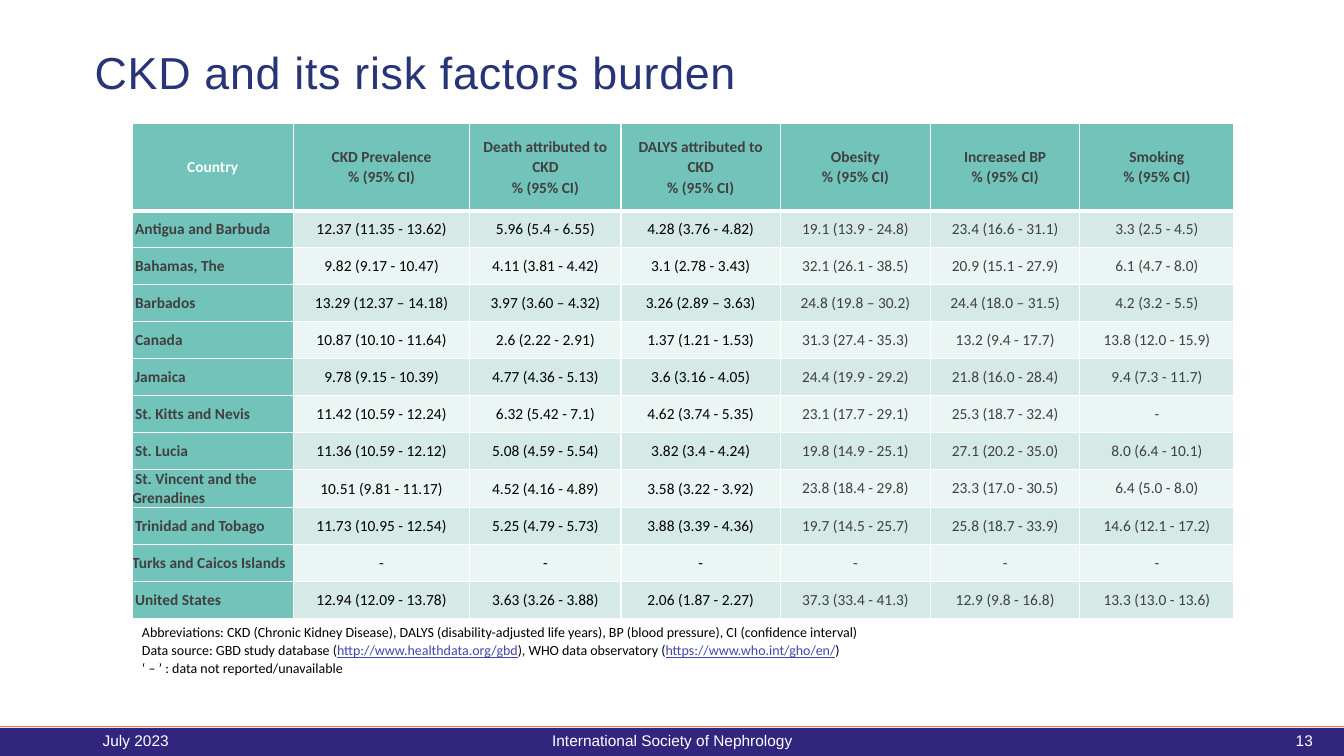
import pptx
import pptx.dml.color
import pptx.enum.shapes
import pptx.enum.text
import pptx.oxml
import pptx.util
import lxml.etree

Inches = pptx.util.Inches
Pt = pptx.util.Pt
ALIGN = pptx.enum.text.PP_ALIGN
MIDDLE = pptx.enum.text.MSO_ANCHOR.MIDDLE
DRAWING = "http://schemas.openxmlformats.org/drawingml/2006/main"

TEAL, WHITE, GREY, BLACK = "72C3B9", "FFFFFF", "404040", "000000"
BANDS = ["EBF5F3", "D5E9E6"]


def color(hex_text):
    return pptx.dml.color.RGBColor.from_string(hex_text)


def style(font, name, size, hex_text, bold=False):
    font.name = name
    font.size = Pt(size)
    font.bold = bold
    font.color.rgb = color(hex_text)


deck = pptx.Presentation()
deck.slide_width = Inches(13.33)
deck.slide_height = Inches(7.5)
page = deck.slides.add_slide(deck.slide_layouts[6])

footer_bar = page.shapes.add_shape(
    pptx.enum.shapes.MSO_SHAPE.RECTANGLE, 0, Inches(7.22), Inches(13.33), Inches(0.28))
footer_bar.shadow.inherit = False
footer_bar.fill.solid()
footer_bar.fill.fore_color.rgb = color("32257E")
footer_bar.line.fill.background()

footer_rule = page.shapes.add_connector(
    pptx.enum.shapes.MSO_CONNECTOR.STRAIGHT, 0, Inches(7.21), Inches(13.33), Inches(7.21))
footer_rule.line.color.rgb = color("FE7055")
footer_rule.line.width = Pt(0.75)
lxml.etree.SubElement(footer_rule._element.spPr, f"{{{DRAWING}}}effectLst")

headings = ["Country", "CKD Prevalence", "Death attributed to CKD", "DALYS attributed to CKD",
            "Obesity", "Increased BP", "Smoking"]
countries = [
    ["Antigua and Barbuda", "12.37 (11.35 - 13.62)", "5.96 (5.4 - 6.55)", "4.28 (3.76 - 4.82)",
     "19.1 (13.9 - 24.8)", "23.4 (16.6 - 31.1)", "3.3 (2.5 - 4.5)"],
    ["Bahamas, The", "9.82 (9.17 - 10.47)", "4.11 (3.81 - 4.42)", "3.1 (2.78 - 3.43)",
     "32.1 (26.1 - 38.5)", "20.9 (15.1 - 27.9)", "6.1 (4.7 - 8.0)"],
    ["Barbados", "13.29 (12.37 – 14.18)", "3.97 (3.60 – 4.32)", "3.26 (2.89 – 3.63)",
     "24.8 (19.8 – 30.2)", "24.4 (18.0 – 31.5)", "4.2 (3.2 - 5.5)"],
    ["Canada", "10.87 (10.10 - 11.64)", "2.6 (2.22 - 2.91)", "1.37 (1.21 - 1.53)",
     "31.3 (27.4 - 35.3)", "13.2 (9.4 - 17.7)", "13.8 (12.0 - 15.9)"],
    ["Jamaica", "9.78 (9.15 - 10.39)", "4.77 (4.36 - 5.13)", "3.6 (3.16 - 4.05)",
     "24.4 (19.9 - 29.2)", "21.8 (16.0 - 28.4)", "9.4 (7.3 - 11.7)"],
    ["St. Kitts and Nevis", "11.42 (10.59 - 12.24)", "6.32 (5.42 - 7.1)", "4.62 (3.74 - 5.35)",
     "23.1 (17.7 - 29.1)", "25.3 (18.7 - 32.4)", "-"],
    ["St. Lucia", "11.36 (10.59 - 12.12)", "5.08 (4.59 - 5.54)", "3.82 (3.4 - 4.24)",
     "19.8 (14.9 - 25.1)", "27.1 (20.2 - 35.0)", "8.0 (6.4 - 10.1)"],
    ["St. Vincent and the Grenadines", "10.51 (9.81 - 11.17)", "4.52 (4.16 - 4.89)",
     "3.58 (3.22 - 3.92)", "23.8 (18.4 - 29.8)", "23.3 (17.0 - 30.5)", "6.4 (5.0 - 8.0)"],
    ["Trinidad and Tobago", "11.73 (10.95 - 12.54)", "5.25 (4.79 - 5.73)", "3.88 (3.39 - 4.36)",
     "19.7 (14.5 - 25.7)", "25.8 (18.7 - 33.9)", "14.6 (12.1 - 17.2)"],
    ["Turks and Caicos Islands"] + ["-"] * 6,
    ["United States", "12.94 (12.09 - 13.78)", "3.63 (3.26 - 3.88)", "2.06 (1.87 - 2.27)",
     "37.3 (33.4 - 41.3)", "12.9 (9.8 - 16.8)", "13.3 (13.0 - 13.6)"],
]
header = headings[:1] + [f"{heading}\n% (95% CI)" for heading in headings[1:]]
rows = [header] + countries
column_widths = [1.6, 1.75, 1.5, 1.58, 1.49, 1.48, 1.53]

table = page.shapes.add_table(
    len(rows), len(header), Inches(1.31), Inches(1.22), Inches(10.92), Inches(4.91)).table
for column, width in zip(table.columns, column_widths):
    column.width = Inches(width)
for row in table.rows:
    row.height = Inches(4.04 / 11)
table.rows[0].height = Inches(0.87)

for row_index, values in enumerate(rows):
    for column_index, value in enumerate(values):
        cell = table.cell(row_index, column_index)
        in_header, in_names = row_index == 0, column_index == 0
        in_burden = not in_header and 1 <= column_index <= 3
        side = 0.03 if in_header else 0.01 if in_burden else 0
        cell.margin_left = cell.margin_right = Inches(side)
        cell.margin_top = Inches(0.01 if in_burden else 0)
        cell.margin_bottom = 0
        cell.vertical_anchor = MIDDLE
        cell.fill.solid()
        cell.fill.fore_color.rgb = color(TEAL if in_header or in_names else BANDS[row_index % 2])

        text_color = WHITE if in_header and in_names else BLACK if in_burden else GREY
        cell.text_frame.text = value
        for para in cell.text_frame.paragraphs:
            para.alignment = ALIGN.LEFT if in_names and not in_header else ALIGN.CENTER
            if in_header:
                para.line_spacing = 1.07
            elif in_names and not value.startswith("Turks"):
                para._p.get_or_add_pPr().set("indent", str(Inches(0.03)))
            for span in para.runs:
                style(span.font, "Calibri", 11, text_color, in_header or in_names)

        for position, edge in enumerate(["lnL", "lnR", "lnT", "lnB"]):
            heavy = (row_index, edge) in [(0, "lnB"), (1, "lnT")]
            border = pptx.oxml.parse_xml(
                f'<a:{edge} xmlns:a="{DRAWING}" w="{Pt(3 if heavy else 1)}">'
                f'<a:solidFill><a:srgbClr val="{WHITE}"/></a:solidFill></a:{edge}>')
            cell._tc.get_or_add_tcPr().insert(position, border)

notes = [
    ["Abbreviations: CKD (Chronic Kidney Disease), DALYS (disability-adjusted life years), "
     "BP (blood pressure), CI (confidence interval)"],
    ["Data source: GBD study database (", "http://www.healthdata.org/gbd",
     "), WHO data observatory (", "https://www.who.int/gho/en/", ")"],
    ["‘ – ’ : data not reported/unavailable"],
]
notes_box = page.shapes.add_textbox(Inches(1.31), Inches(6.13), Inches(8.25), Inches(0.64))
notes_box.text_frame.word_wrap = True
for index, pieces in enumerate(notes):
    para = notes_box.text_frame.paragraphs[0] if index == 0 else notes_box.text_frame.add_paragraph()
    para.line_spacing = 1.07
    for piece in pieces:
        span = para.add_run()
        span.text = piece
        is_address = piece.startswith("http")
        style(span.font, "Calibri", 10, "4248A9" if is_address else BLACK)
        span.font.underline = is_address

labels = [
    ("CKD and its risk factors burden", 0.84, 0.39, 9.26, 0.71, 32, "283378", ALIGN.LEFT),
    ("July 2023", 0.92, 7.15, 3, 0.4, 11, WHITE, ALIGN.LEFT),
    ("International Society of Nephrology", 4.42, 7.15, 4.5, 0.4, 11, WHITE, ALIGN.CENTER),
    ("13", 9.42, 7.15, 3.7, 0.4, 11, WHITE, ALIGN.RIGHT),
]
for text, left, top, width, height, size, text_color, alignment in labels:
    box = page.shapes.add_textbox(Inches(left), Inches(top), Inches(width), Inches(height))
    box.text_frame.word_wrap = True
    box.text_frame.vertical_anchor = MIDDLE
    box.text_frame.text = text
    para = box.text_frame.paragraphs[0]
    para.alignment = alignment
    style(para.runs[0].font, "Arial", size, text_color)
    if size == 32:
        para.line_spacing = 0.9
        para.runs[0]._r.get_or_add_rPr().set("spc", "50")

deck.save("out.pptx")
